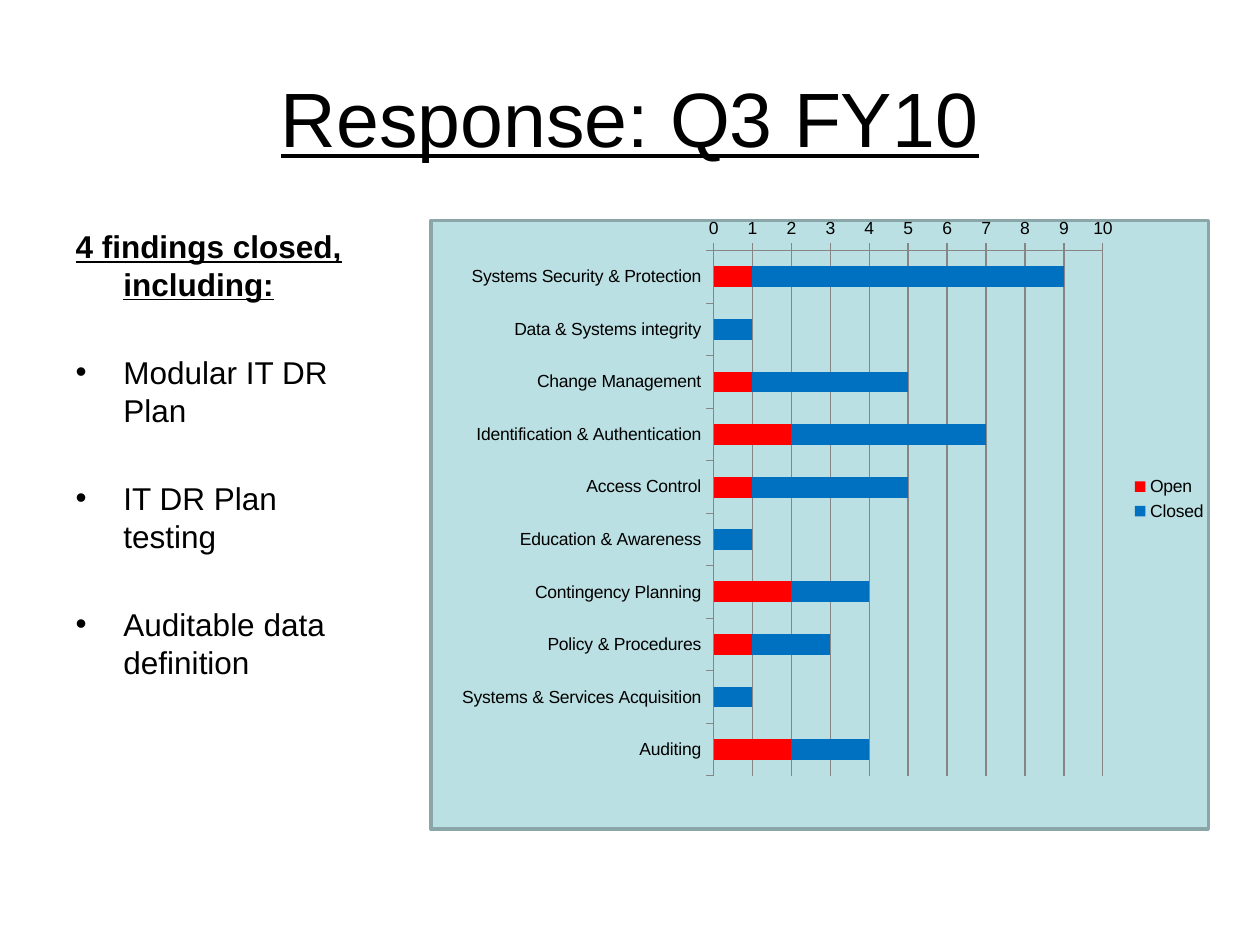
from lxml.etree import SubElement
from pptx import Presentation
from pptx.chart.data import CategoryChartData
from pptx.dml.color import RGBColor
from pptx.enum.chart import XL_CHART_TYPE, XL_LEGEND_POSITION, XL_TICK_MARK
from pptx.enum.shapes import MSO_SHAPE
from pptx.enum.text import MSO_ANCHOR, MSO_AUTO_SIZE, PP_ALIGN
from pptx.oxml.ns import qn
from pptx.util import Inches, Pt

COLORS = {"text": "000000", "panel": "BBE0E3", "border": "8AA6A8",
          "grid": "868686", "Open": "FF0000", "Closed": "0070C0"}
FINDINGS = [
    ("Systems Security & Protection", 1, 8),
    ("Data & Systems integrity", 0, 1),
    ("Change Management", 1, 4),
    ("Identification & Authentication", 2, 5),
    ("Access Control", 1, 4),
    ("Education & Awareness", 0, 1),
    ("Contingency Planning", 2, 2),
    ("Policy & Procedures", 1, 2),
    ("Systems & Services Acquisition", 0, 1),
    ("Auditing", 2, 2),
]
ITEMS = ["Modular IT DR Plan", "IT DR Plan testing", "Auditable data definition"]


def rgb(name):
    """Return the named palette colour."""
    return RGBColor.from_string(COLORS[name])


def write(p, text, size=18, bold=False, underline=False):
    """Add formatted text to a paragraph."""
    r = p.add_run()
    r.text = text
    font = r.font
    font.name, font.size = "Arial", Pt(size)
    font.bold, font.underline = bold, underline
    font.color.rgb = rgb("text")


def place(sp, x, y, w, h):
    """Move and size a shape in inches."""
    sp.left, sp.top, sp.width, sp.height = map(Inches, (x, y, w, h))


class Deck:
    """Hold the presentation style and the current slide."""

    def __init__(self):
        """Start a presentation with one title and body slide."""
        self.prs = Presentation()
        self.prs.slide_width, self.prs.slide_height = Inches(10), Inches(7.5)
        self.s = self.prs.slides.add_slide(self.prs.slide_layouts[1])

    def title(self, text, *box):
        """Fill the title placeholder."""
        sp = self.s.shapes.title
        place(sp, *box)
        tf = sp.text_frame
        tf.vertical_anchor = MSO_ANCHOR.MIDDLE
        p = tf.paragraphs[0]
        p.alignment = PP_ALIGN.CENTER
        write(p, text, size=44, underline=True)

    def body(self, heading, items, *box):
        """Fill the body placeholder with a heading and bullets."""
        sp = self.s.placeholders[1]
        place(sp, *box)
        tf = sp.text_frame
        tf.auto_size = MSO_AUTO_SIZE.NONE
        for i, text in enumerate([heading, *items]):
            p = tf.add_paragraph() if i else tf.paragraphs[0]
            pPr = p._p.get_or_add_pPr()
            pPr.set("marL", str(Inches(0.38)))
            pPr.set("indent", str(-Inches(0.38)))
            if i:
                SubElement(pPr, qn("a:buChar"), char="•")
            else:
                SubElement(pPr, qn("a:buNone"))
            p.line_spacing = Pt(21.6)
            p.space_before = Pt(28.8 if i else 0)
            write(p, text, bold=not i, underline=not i)

    def panel(self, *box):
        """Draw the panel behind the chart."""
        sp = self.s.shapes.add_shape(MSO_SHAPE.RECTANGLE, *map(Inches, box))
        sp.shadow.inherit = False
        sp.fill.solid()
        sp.fill.fore_color.rgb = rgb("panel")
        sp.line.color.rgb = rgb("border")
        sp.line.width = Pt(2)

    def chart(self, rows, names, *box):
        """Add the stacked bar chart."""
        labels, *columns = zip(*rows)
        data = CategoryChartData()
        data.categories = labels
        for name, values in zip(names, columns):
            data.add_series(name, values)
        chart = self.s.shapes.add_chart(
            XL_CHART_TYPE.BAR_STACKED, *map(Inches, box), data).chart
        chart.has_title = False
        chart.font.name, chart.font.size = "Arial", Pt(10)
        chart.font.color.rgb = rgb("text")
        chart.has_legend = True
        chart.legend.position = XL_LEGEND_POSITION.RIGHT
        chart.legend.include_in_layout = False
        plot = chart.plots[0]
        plot.gap_width, plot.overlap = 150, 100
        plot.vary_by_categories = False
        for series in plot.series:
            series.format.fill.solid()
            series.format.fill.fore_color.rgb = rgb(series.name)
        value, category = chart.value_axis, chart.category_axis
        category.reverse_order = True
        value.minimum_scale, value.maximum_scale, value.major_unit = 0, 10, 1
        value.has_major_gridlines = True
        for axis in (value, category):
            axis.major_tick_mark = XL_TICK_MARK.OUTSIDE
            axis.format.line.color.rgb = rgb("grid")
        value.major_gridlines.format.line.color.rgb = rgb("grid")
        self.plot_layout(chart, x=0.35, y=0.07, w=0.5, h=0.91)

    def plot_layout(self, chart, **fractions):
        """Fix the inner plot area as fractions of the chart."""
        area = chart._chartSpace.chart.plotArea
        for old in area.findall(qn("c:layout")):
            area.remove(old)
        layout = SubElement(area, qn("c:layout"))
        area.insert(0, layout)
        manual = SubElement(layout, qn("c:manualLayout"))
        SubElement(manual, qn("c:layoutTarget"), val="inner")
        for key in "xy":
            SubElement(manual, qn(f"c:{key}Mode"), val="edge")
        for key, value in fractions.items():
            SubElement(manual, qn(f"c:{key}"), val=str(value))


def main():
    """Build and save the slide."""
    deck = Deck()
    deck.panel(3.42, 1.75, 6.17, 4.83)
    deck.title("Response: Q3 FY10", 0.5, 0.3, 9, 1.25)
    deck.body("4 findings closed, including:", ITEMS, 0.5, 1.75, 2.5, 4.83)
    deck.chart(FINDINGS, ("Open", "Closed"), 3.5, 1.67, 6.18, 4.58)
    deck.prs.save("out.pptx")


if __name__ == "__main__":
    main()
